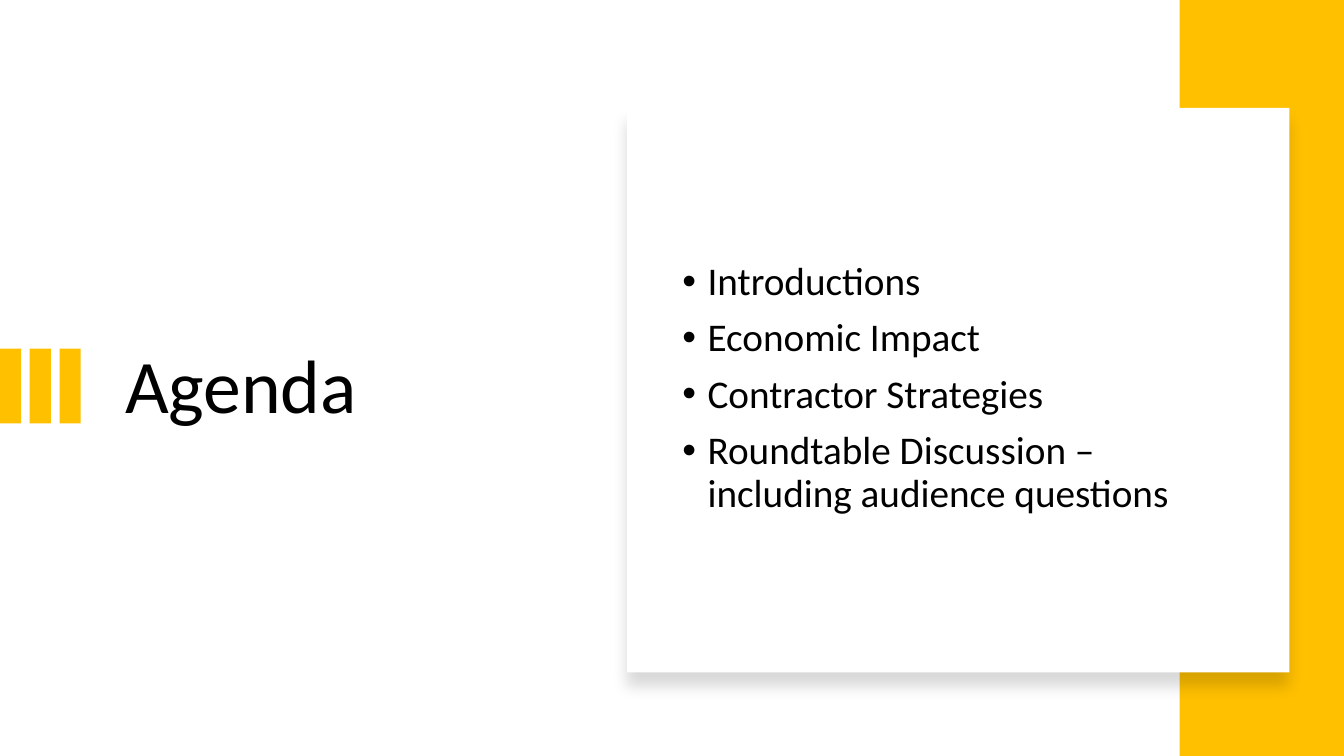
from lxml import etree
from pptx import Presentation
from pptx.dml.color import RGBColor as Rgb
from pptx.enum.shapes import MSO_SHAPE as Kind
from pptx.enum.text import MSO_ANCHOR as Anchor, MSO_AUTO_SIZE as Fit, PP_ALIGN as Align
from pptx.oxml import parse_xml
from pptx.oxml.ns import qn
from pptx.util import Inches, Pt

TITLE = "Agenda"
ITEMS = [
    "Introductions",
    "Economic Impact",
    "Contractor Strategies",
    "Roundtable Discussion – including audience questions",
]
COLORS = {"gold": "FFC000", "white": "FFFFFF", "black": "000000"}
BOXES = {
    "title": (1.14, 1.46, 4.26, 4.79),
    "band": (11.7, 0, 1.63, 7.5),
    "card": (6.22, 1.07, 6.57, 5.6),
    "list": (6.67, 1.46, 5.75, 4.79),
}
BARS = {"count": 3, "step": 0.295, "top": 3.46, "width": 0.21, "height": 0.74}
FRAME = {"word_wrap": True, "auto_size": Fit.NONE, "vertical_anchor": Anchor.MIDDLE}
PARA = {"alignment": Align.LEFT, "line_spacing": 0.9}
LIST = {**PARA, "space_before": Pt(10)}
SHADOW = (
    '<a:effectLst xmlns:a="http://schemas.openxmlformats.org/drawingml/2006/main">'
    f'<a:outerShdw blurRad="{Pt(11)}" dist="{Pt(10)}" dir="5400000" algn="t" rotWithShape="0">'
    f'<a:srgbClr val="{COLORS["black"]}"><a:alpha val="15000"/></a:srgbClr>'
    "</a:outerShdw></a:effectLst>"
)


def apply(obj, values):
    for name, value in values.items():
        setattr(obj, name, value)


def place(box):
    return [Inches(n) for n in box]


def block(shapes, box, color):
    shape = shapes.add_shape(Kind.RECTANGLE, *place(box))
    shape.shadow.inherit = False
    shape.fill.solid()
    shape.fill.fore_color.rgb = Rgb.from_string(COLORS[color])
    shape.line.fill.background()
    return shape


def write(frame, lines, size, values):
    apply(frame, FRAME)
    for i, line in enumerate(lines):
        para = frame.paragraphs[0] if i == 0 else frame.add_paragraph()
        apply(para, values)
        run = para.add_run()
        run.text = line
        apply(run.font, {"name": "Calibri", "size": Pt(size)})
        run.font.color.rgb = Rgb.from_string(COLORS["black"])


def bullet(para):
    props = para._p.get_or_add_pPr()
    props.set("marL", str(Inches(0.25)))
    props.set("indent", str(-Inches(0.25)))
    etree.SubElement(props, qn("a:buFont")).set("typeface", "Arial")
    etree.SubElement(props, qn("a:buChar")).set("char", "•")


def main():
    deck = Presentation()
    apply(deck, {"slide_width": Inches(13.33), "slide_height": Inches(7.5)})
    slide = deck.slides.add_slide(deck.slide_layouts[5])
    shapes = slide.shapes

    title = shapes.title
    apply(title, dict(zip(("left", "top", "width", "height"), place(BOXES["title"]))))
    write(title.text_frame, [TITLE], 54, PARA)

    group = shapes.add_group_shape()
    for i in range(BARS["count"]):
        box = (i * BARS["step"], BARS["top"], BARS["width"], BARS["height"])
        block(group.shapes, box, "gold")

    block(shapes, BOXES["band"], "gold")
    card = block(shapes, BOXES["card"], "white")
    props = card._element.spPr
    props.replace(props.find(qn("a:effectLst")), parse_xml(SHADOW))

    agenda = shapes.add_textbox(*place(BOXES["list"])).text_frame
    write(agenda, ITEMS, 28, LIST)
    for para in agenda.paragraphs:
        bullet(para)

    deck.save("out.pptx")


if __name__ == "__main__":
    main()
